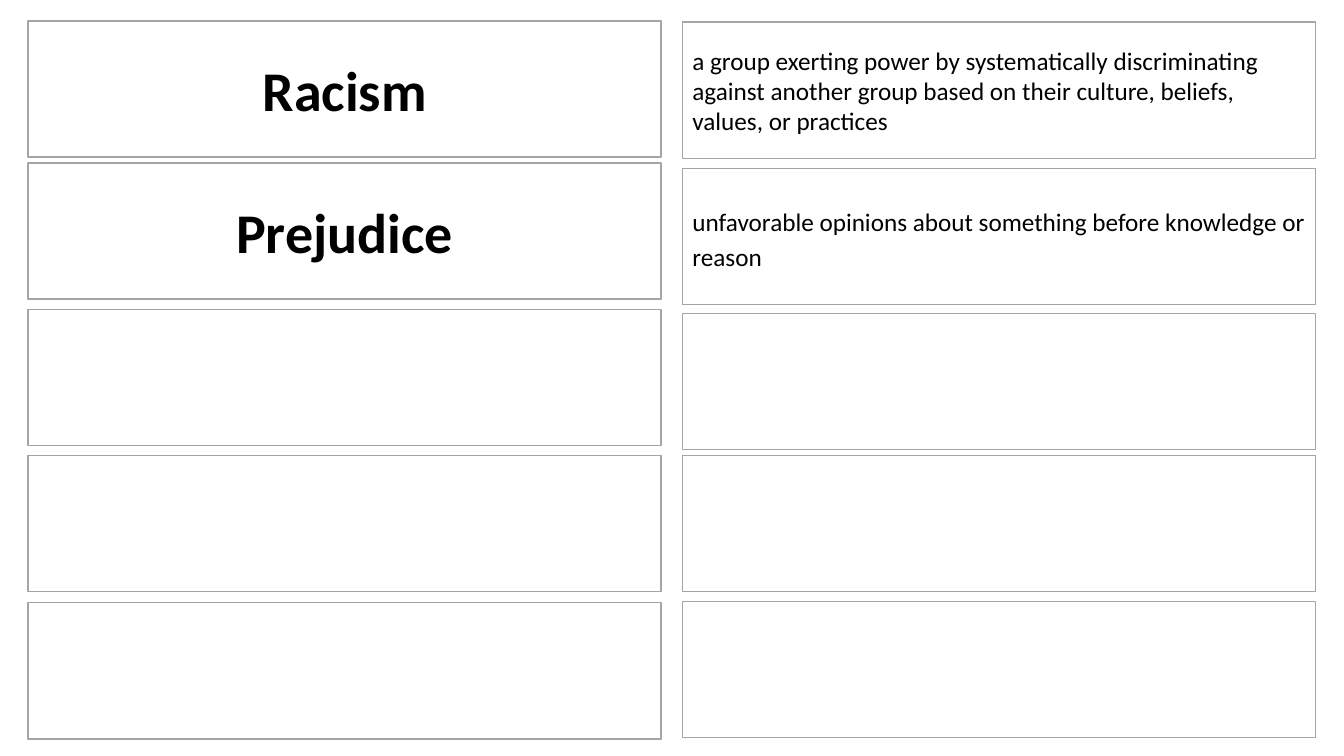
from pptx import Presentation
from pptx.dml.color import RGBColor
from pptx.enum.shapes import MSO_SHAPE
from pptx.enum.text import MSO_ANCHOR, PP_ALIGN
from pptx.util import Cm, Pt

WHITE = RGBColor(0xFF, 0xFF, 0xFF)
BLACK = RGBColor(0x00, 0x00, 0x00)
GREY = RGBColor(0xA5, 0xA5, 0xA5)

TERMS = ["Racism", "Prejudice", "", "", ""]
DEFINITIONS = [
    "a group exerting power by systematically discriminating against another "
    "group based on their culture, beliefs, values, or practices",
    "unfavorable opinions about something before knowledge or reason",
    "", "", "",
]
TERM_TOPS = [0.53, 4.11, 7.8, 11.48, 15.19]
DEFINITION_TOPS = [0.56, 4.24, 7.9, 11.48, 15.16]
DEFINITION_SPACING = [1.0, 1.15, 1.0, 1.0, 1.0]
SINGLE_SPACING = [1.0] * len(TERMS)

TERM_FONT = {"name": "Calibri", "size": Pt(40), "bold": True}
DEFINITION_FONT = {"name": "Calibri", "size": Pt(18), "bold": False}
COLUMNS = [
    (0.71, TERM_TOPS, TERMS, SINGLE_SPACING, PP_ALIGN.CENTER, TERM_FONT),
    (17.2, DEFINITION_TOPS, DEFINITIONS, DEFINITION_SPACING, PP_ALIGN.LEFT, DEFINITION_FONT),
]
CARD_WIDTH, CARD_HEIGHT = 15.95, 3.43


def add_card(page, left, top):
    """Add one outlined white card and return it."""
    box = page.shapes.add_shape(
        MSO_SHAPE.RECTANGLE, Cm(left), Cm(top), Cm(CARD_WIDTH), Cm(CARD_HEIGHT))
    box.shadow.inherit = False
    box.fill.solid()
    box.fill.fore_color.rgb = WHITE
    box.line.color.rgb = GREY
    box.line.width = Pt(1)
    return box


def write_text(box, text, spacing, alignment, font_format):
    """Write one formatted paragraph in the middle of a card."""
    frame = box.text_frame
    frame.word_wrap = True
    frame.vertical_anchor = MSO_ANCHOR.MIDDLE
    para = frame.paragraphs[0]
    para.alignment = alignment
    para.line_spacing = spacing
    span = para.add_run()
    span.text = text
    span.font.color.rgb = BLACK
    for name, value in font_format.items():
        setattr(span.font, name, value)


def main():
    """Build the sheet of term and definition cards."""
    deck = Presentation()
    deck.slide_width, deck.slide_height = Cm(33.87), Cm(19.05)
    page = deck.slides.add_slide(deck.slide_layouts[6])
    for left, tops, texts, spacings, alignment, font_format in COLUMNS:
        for top, text, spacing in zip(tops, texts, spacings):
            box = add_card(page, left, top)
            if text:
                write_text(box, text, spacing, alignment, font_format)
    deck.save("out.pptx")


if __name__ == "__main__":
    main()
